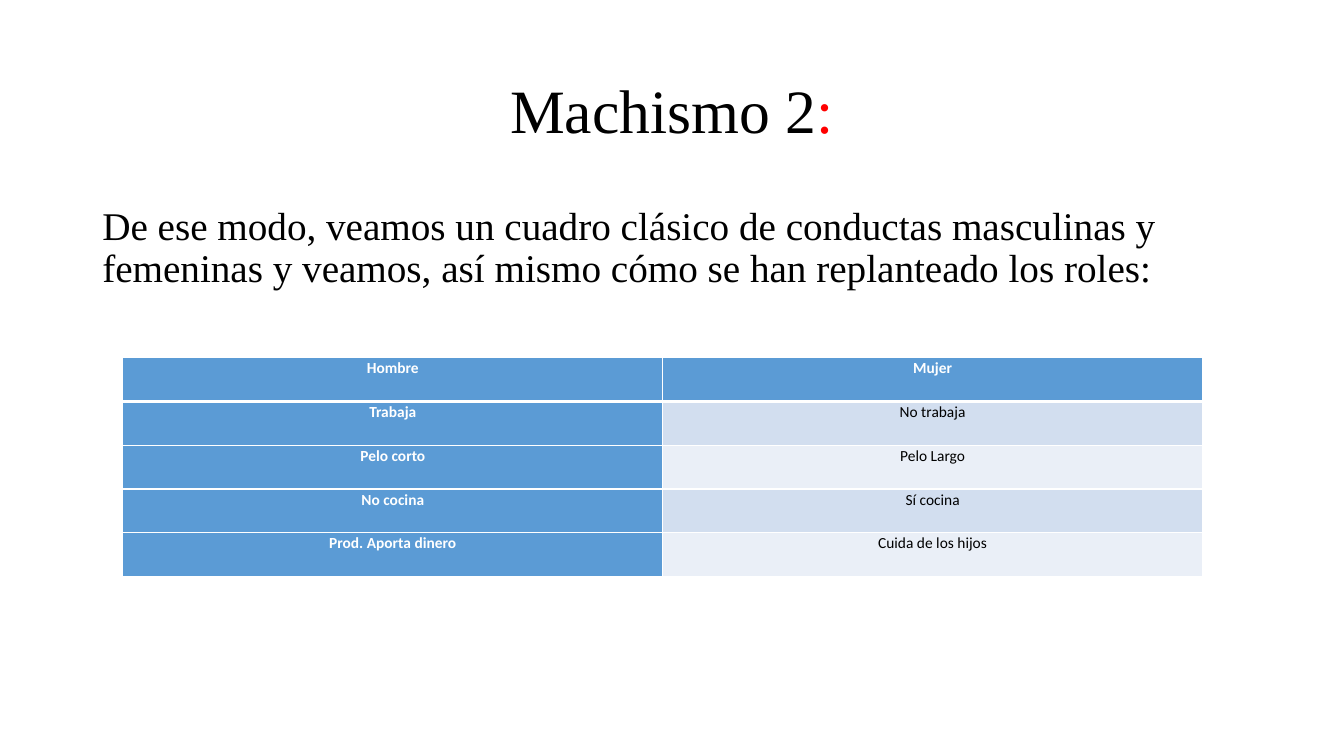
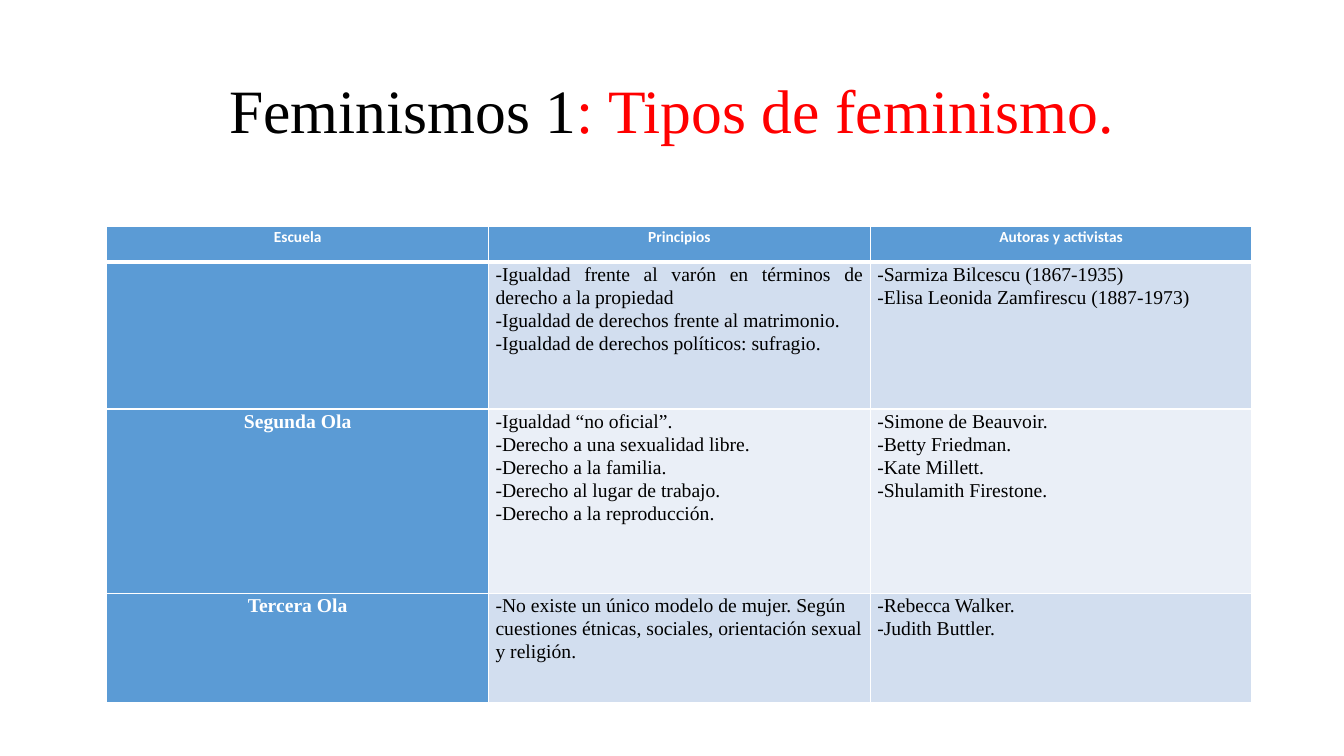
from lxml import etree
from pptx import Presentation
from pptx.dml.color import RGBColor
from pptx.enum import text
from pptx.oxml import ns
from pptx.util import Pt

# Shared look
BLACK = RGBColor(0x00, 0x00, 0x00)
WHITE = RGBColor(0xFF, 0xFF, 0xFF)
RED = RGBColor(0xFF, 0x00, 0x00)
BLUE = RGBColor(0x5B, 0x9B, 0xD5)
BANDS = (RGBColor(0xD2, 0xDE, 0xEF), RGBColor(0xEA, 0xEF, 0xF7))
SERIF, SANS = "Times New Roman", "Calibri"
LEFT, WIDTH = 66, 828
CENTER, LEFT_AL, JUSTIFY = (text.PP_ALIGN.CENTER, text.PP_ALIGN.LEFT,
                            text.PP_ALIGN.JUSTIFY)
SMALL = {"name": SANS, "size": Pt(11)}
LARGE = {"name": SERIF, "size": Pt(14)}

# Table contents: a cell holds one string per paragraph
ROLES = [
    [["Hombre"], ["Mujer"]],
    [["Trabaja"], ["No trabaja"]],
    [["Pelo corto"], ["Pelo Largo"]],
    [["No cocina"], ["Sí cocina"]],
    [["Prod. Aporta dinero"], ["Cuida de los hijos"]],
]
WAVES = [
    [["Escuela"], ["Principios"], ["Autoras y activistas"]],
    [[],
     ["-Igualdad frente al varón en términos de derecho a la propiedad",
      "-Igualdad de derechos frente al matrimonio.",
      "-Igualdad de derechos políticos: sufragio."],
     ["-Sarmiza Bilcescu (1867-1935)",
      "-Elisa Leonida Zamfirescu (1887-1973)"]],
    [["Segunda Ola"],
     ["-Igualdad “no oficial”.", "-Derecho a una sexualidad libre.",
      "-Derecho a la familia.", "-Derecho al lugar de trabajo.",
      "-Derecho a la reproducción."],
     ["-Simone de Beauvoir.", "-Betty Friedman.", "-Kate Millett.",
      "-Shulamith Firestone."]],
    [["Tercera Ola"],
     ["-No existe un único modelo de mujer. Según cuestiones étnicas, "
      "sociales, orientación sexual y religión."],
     ["-Rebecca Walker.", "-Judith Buttler."]],
]


def set_attrs(obj, values):
    for key, value in values.items():
        setattr(obj, key, value)


def add_run(p, words, color, font):
    r = p.add_run()
    r.text = words
    set_attrs(r.font, font)
    r.font.color.rgb = color


def add_titled_slide(prs, topic, rest):
    """Title-only slide: black topic, red remainder."""
    s = prs.slides.add_slide(prs.slide_layouts[5])
    sp = s.shapes.title
    set_attrs(sp, {"left": Pt(LEFT), "top": Pt(28.8),
                   "width": Pt(WIDTH), "height": Pt(104.4)})
    tf = sp.text_frame
    set_attrs(tf, {"auto_size": text.MSO_AUTO_SIZE.NONE, "word_wrap": True,
                   "vertical_anchor": text.MSO_ANCHOR.MIDDLE})
    p = tf.paragraphs[0]
    set_attrs(p, {"alignment": CENTER, "line_spacing": 0.9})
    for words, color in ((topic, BLACK), (rest, RED)):
        add_run(p, words, color, {"name": SERIF, "size": Pt(44)})
    return s


def add_body(s, words):
    sp = s.shapes.add_textbox(Pt(LEFT), Pt(144), Pt(WIDTH), Pt(342.7))
    tf = sp.text_frame
    tf.word_wrap = True
    p = tf.paragraphs[0]
    p.line_spacing = 0.9
    add_run(p, words, BLACK, {"name": SERIF, "size": Pt(28)})


def set_borders(cell, widths):
    """White borders; widths maps each side (L, R, T, B) to points."""
    tc_pr = cell._tc.get_or_add_tcPr()
    for side, width in widths.items():
        ln = etree.SubElement(tc_pr, ns.qn("a:ln" + side), w=str(Pt(width)))
        fill = etree.SubElement(ln, ns.qn("a:solidFill"))
        etree.SubElement(fill, ns.qn("a:srgbClr"), val=str(WHITE))


def fill_cell(cell, lines, row, col, font, alignment):
    is_head = row == 0 or col == 0
    set_attrs(cell, {"margin_left": Pt(5), "margin_right": Pt(5),
                     "margin_top": 0, "margin_bottom": 0})
    set_borders(cell, {"L": 1, "R": 1, "T": 3 if row == 1 else 1,
                       "B": 3 if row == 0 else 1})
    cell.fill.solid()
    cell.fill.fore_color.rgb = BLUE if is_head else BANDS[(row - 1) % 2]
    tf = cell.text_frame
    for i, line in enumerate(lines):
        p = tf.add_paragraph() if i else tf.paragraphs[0]
        set_attrs(p, {"alignment": CENTER if is_head else alignment,
                      "line_spacing": 1.07})
        add_run(p, line, WHITE if is_head else BLACK,
                {**font, "bold": is_head})


def add_grid(s, cells, left, top, width, heights, font, align):
    """Table with equal columns; align(row, col) places the body text."""
    n_cols = len(cells[0])
    table = s.shapes.add_table(len(cells), n_cols, Pt(left), Pt(top),
                               Pt(width), Pt(sum(heights))).table
    for column in table.columns:
        column.width = Pt(width / n_cols)
    for row, (height, row_cells) in enumerate(zip(heights, cells)):
        table.rows[row].height = Pt(height)
        for col, lines in enumerate(row_cells):
            fill_cell(table.cell(row, col), lines, row, col,
                      font if row else SMALL, align(row, col))


def main():
    prs = Presentation()
    set_attrs(prs, {"slide_width": Pt(960), "slide_height": Pt(540)})

    # Classic roles
    s = add_titled_slide(prs, "Machismo 2", ":")
    add_body(s, "De ese modo, veamos un cuadro clásico de conductas "
                "masculinas y femeninas y veamos, así mismo cómo se han "
                "replanteado los roles:")
    add_grid(s, ROLES, 87.8, 255.6, 771.2, [31.25] * len(ROLES), SMALL,
             lambda row, col: CENTER)

    # Waves of feminism
    s = add_titled_slide(prs, "Feminismos 1", ": Tipos de feminismo.")
    add_grid(s, WAVES, 76.3, 162, 818, [25.2, 105, 131.5, 78.3], LARGE,
             lambda row, col: JUSTIFY if (row, col) == (1, 1) else LEFT_AL)

    prs.save("out.pptx")


if __name__ == "__main__":
    main()
